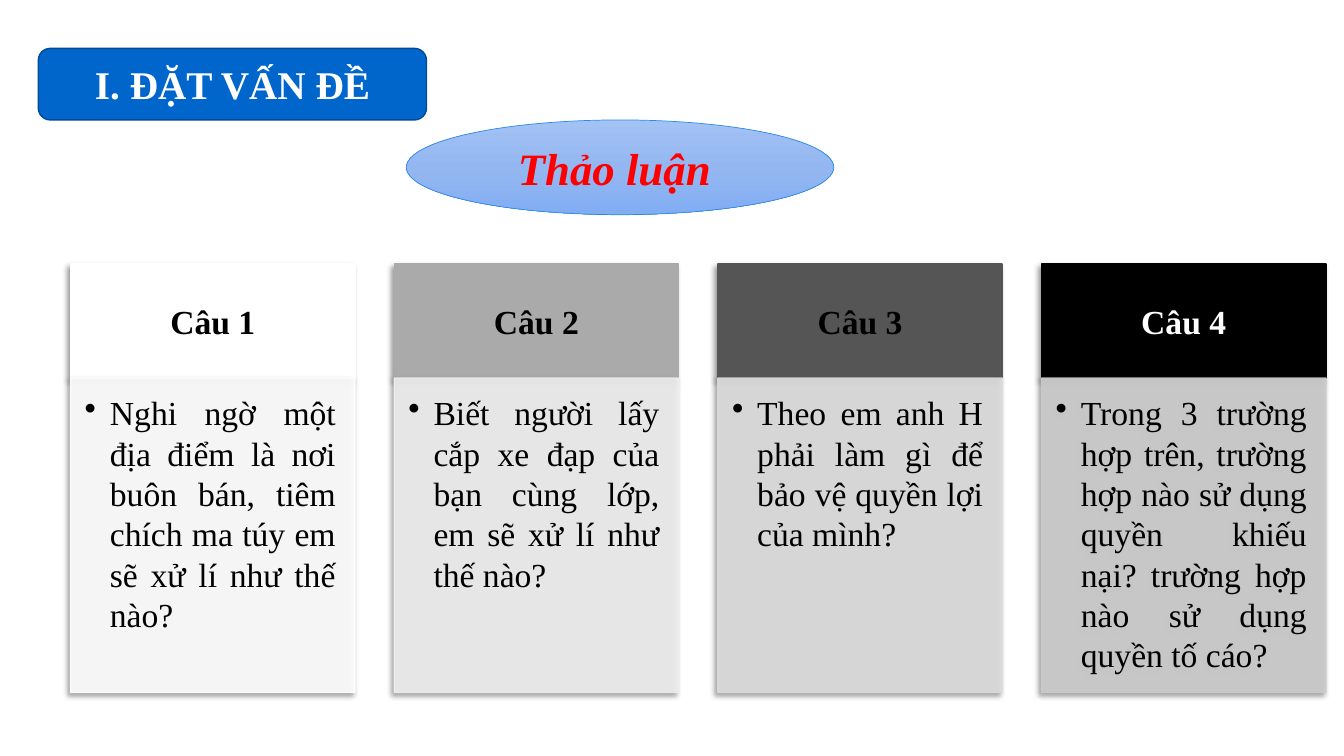
"""Builds the discussion slide: a section title, a topic oval and four question cards."""
from copy import deepcopy

from pptx import Presentation
from pptx.dml.color import RGBColor
from pptx.enum.shapes import MSO_SHAPE as Shape
from pptx.enum.text import MSO_ANCHOR as Anchor, PP_ALIGN as Align
from pptx.oxml import parse_xml
from pptx.oxml.ns import nsdecls, qn
from pptx.util import Inches, Pt

FONT = "Times New Roman"
WHITE = RGBColor(0xFF, 0xFF, 0xFF)
BLACK = RGBColor(0x00, 0x00, 0x00)
RED = RGBColor(0xFF, 0x00, 0x00)
BLUE = RGBColor(0x00, 0x66, 0xCC)
DARK_BLUE = RGBColor(0x00, 0x4B, 0x97)
OVAL_LINE = RGBColor(0x2D, 0x8A, 0xE7)
OVAL_TOP = RGBColor(0xA3, 0xC2, 0xF4)
OVAL_MIDDLE = RGBColor(0x95, 0xB7, 0xF1)
OVAL_BOTTOM = RGBColor(0x81, 0xAD, 0xF3)
GREY = RGBColor(0xAA, 0xAA, 0xAA)
DARK_GREY = RGBColor(0x55, 0x55, 0x55)
PALE_1 = RGBColor(0xEE, 0xEE, 0xEE)
PALE_2 = RGBColor(0xDC, 0xDC, 0xDC)
PALE_3 = RGBColor(0xCB, 0xCB, 0xCB)

LEFT, COLUMN_STEP, CARD_WIDTH = 0.7, 3.21, 2.82
HEADER_TOP, HEADER_HEIGHT, BODY_HEIGHT = 2.62, 1.13, 3.12
HEADER_INSETS = (0.19, 0.11, 0.19, 0.11)
BODY_INSETS = (0.14, 0.14, 0.19, 0.21)
PLAIN_INSETS = (0.1, 0.05, 0.1, 0.05)

CARDS = [
    ("Câu 1", WHITE, BLACK, WHITE,
     "Nghi ngờ một địa điểm là nơi buôn bán, tiêm chích ma túy em sẽ xử lí như thế nào?"),
    ("Câu 2", GREY, BLACK, PALE_1,
     "Biết người lấy cắp xe đạp của bạn cùng lớp, em sẽ xử lí như thế nào?"),
    ("Câu 3", DARK_GREY, BLACK, PALE_2,
     "Theo em anh H phải làm gì để bảo vệ quyền lợi của mình?"),
    ("Câu 4", BLACK, WHITE, PALE_3,
     "Trong 3 trường hợp trên, trường hợp nào sử dụng quyền khiếu nại? "
     "trường hợp nào sử dụng quyền tố cáo?"),
]


def add_panel(kind, box, fill, line, width, insets=PLAIN_INSETS):
    """Add a filled, outlined shape without a shadow."""
    shape = slide.shapes.add_shape(kind, *[Inches(length) for length in box])
    shape.shadow.inherit = False
    shape.fill.solid()
    shape.fill.fore_color.rgb = fill
    shape.line.color.rgb = line
    shape.line.width = Pt(width)
    frame = shape.text_frame
    frame.word_wrap = True
    frame.vertical_anchor = Anchor.MIDDLE
    (frame.margin_left, frame.margin_top,
     frame.margin_right, frame.margin_bottom) = [Inches(inset) for inset in insets]
    return shape


def write(shape, text, size, color, bold=False, italic=False, align=Align.CENTER):
    """Write one run into the first paragraph of a shape."""
    paragraph = shape.text_frame.paragraphs[0]
    paragraph.alignment = align
    run = paragraph.add_run()
    run.text = text
    run.font.name = FONT
    run.font.size = Pt(size)
    run.font.color.rgb = color
    run.font.bold = bold
    run.font.italic = italic
    return paragraph


presentation = Presentation()
presentation.slide_width = Inches(13.33)
presentation.slide_height = Inches(7.5)
slide = presentation.slides.add_slide(presentation.slide_layouts[6])

for column, (title, header_color, title_color, body_color, question) in enumerate(CARDS):
    left = LEFT + column * COLUMN_STEP
    header = add_panel(Shape.RECTANGLE, (left, HEADER_TOP, CARD_WIDTH, HEADER_HEIGHT),
                       header_color, header_color, 1, HEADER_INSETS)
    write(header, title, 24, title_color, bold=True)

    body = add_panel(Shape.RECTANGLE,
                     (left, HEADER_TOP + HEADER_HEIGHT, CARD_WIDTH, BODY_HEIGHT),
                     body_color, body_color, 1, BODY_INSETS)
    body.text_frame.vertical_anchor = Anchor.TOP
    for color in body._element.spPr.iter(qn("a:srgbClr")):
        color.append(parse_xml(f'<a:alpha {nsdecls("a")} val="90000"/>'))
    paragraph = write(body, question, 24, BLACK, align=Align.JUSTIFY)
    properties = paragraph._p.get_or_add_pPr()
    properties.set("marL", str(Inches(0.25)))
    properties.set("indent", str(-Inches(0.25)))
    properties.append(parse_xml(f'<a:buChar {nsdecls("a")} char="•"/>'))

    for panel in (header, body):
        panel._element.spPr.find(qn("a:effectLst")).append(parse_xml(
            f'<a:outerShdw {nsdecls("a")} blurRad="{Pt(4)}" dist="{Pt(3)}" '
            'dir="8100000" rotWithShape="0"><a:srgbClr val="000000">'
            '<a:alpha val="40000"/></a:srgbClr></a:outerShdw>'))

section = add_panel(Shape.ROUNDED_RECTANGLE, (0.38, 0.48, 3.85, 0.71), BLUE, DARK_BLUE, 1)
write(section, "I. ĐẶT VẤN ĐỀ", 28, WHITE, bold=True)

topic = add_panel(Shape.OVAL, (4.03, 1.19, 4.24, 0.94), OVAL_TOP, OVAL_LINE, 0.5)
topic.fill.gradient()
topic.fill.gradient_angle = 270
first_stop = topic._element.spPr.find(".//" + qn("a:gs"))
first_stop.addnext(deepcopy(first_stop))
stops = zip(topic.fill.gradient_stops, (OVAL_TOP, OVAL_MIDDLE, OVAL_BOTTOM))
for index, (stop, color) in enumerate(stops):
    stop.position = index / 2
    stop.color.rgb = color
write(topic, "Thảo luận ", 32, RED, bold=True, italic=True)

presentation.save("out.pptx")
